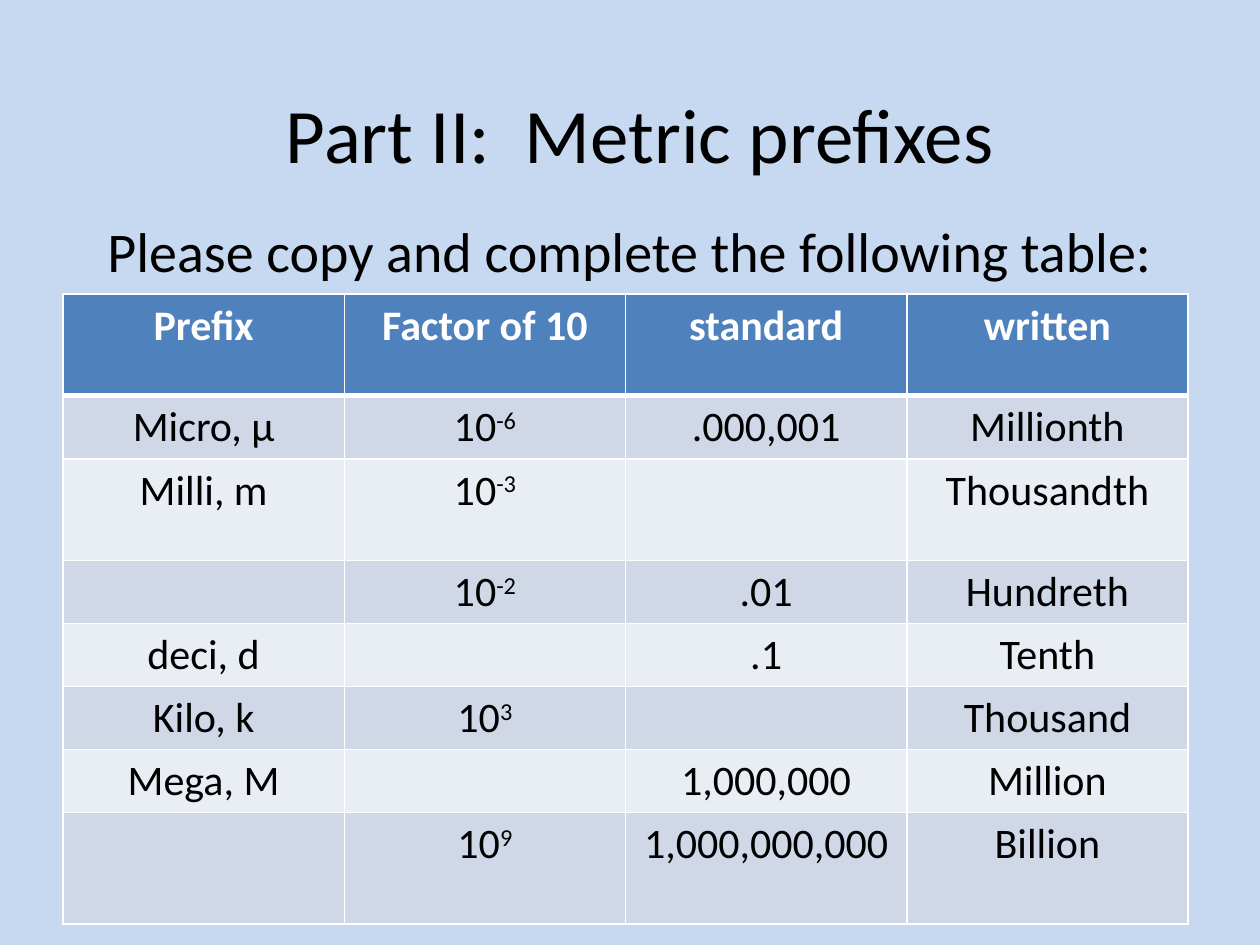
from dataclasses import dataclass

from lxml import etree
from pptx import Presentation
from pptx import util as u
from pptx.dml.color import RGBColor
from pptx.enum import text
from pptx.oxml import ns

# Content: a "^" in a cell starts the exponent
TITLE = "Part II:  Metric prefixes"
SUBTITLE = "Please copy and complete the following table:"
HEADER = ("Prefix", "Factor of 10", "standard", "written")
PREFIXES = [
    ("Micro, µ", "10^-6", ".000,001", "Millionth"),
    ("Milli, m", "10^-3", "", "Thousandth"),
    ("", "10^-2", ".01", "Hundreth"),
    ("deci, d", "", ".1", "Tenth"),
    ("Kilo, k", "10^3", "", "Thousand"),
    ("Mega, M", "", "1,000,000", "Million"),
    ("", "10^9", "1,000,000,000", "Billion"),
]
NORMAL, TALL, LAST = u.Cm(1.25), u.Cm(2.05), u.Cm(2.24)
ROW_HEIGHTS = (TALL, NORMAL, TALL, NORMAL, NORMAL, NORMAL, NORMAL, LAST)
COLUMN_WIDTH = u.Cm(5.67)


@dataclass(frozen=True)
class Theme:
    font: str = "Calibri"
    background: str = "C6D9F1"
    ink: str = "000000"
    white: str = "FFFFFF"
    header: str = "4F81BD"
    bands: tuple = ("D0D8E8", "E9EDF4")
    title_size: int = 44
    subtitle_size: int = 32
    table_size: int = 24


THEME = Theme()


def format_paragraph(paragraph, size, color, bold=False):
    paragraph.alignment = text.PP_ALIGN.CENTER
    for font in [paragraph.font] + [run.font for run in paragraph.runs]:
        font.name, font.size, font.bold = THEME.font, u.Pt(size), bold
        font.color.rgb = RGBColor.from_string(color)


def add_heading(slide, words, box, size, anchor):
    text_frame = slide.shapes.add_textbox(*map(u.Cm, box)).text_frame
    text_frame.word_wrap = True
    text_frame.vertical_anchor = anchor
    text_frame.text = words
    format_paragraph(text_frame.paragraphs[0], size, THEME.ink)


def set_borders(cell, bottom_width, top_width):
    properties = cell._tc.get_or_add_tcPr()
    widths = {"lnL": 1, "lnR": 1, "lnT": top_width, "lnB": bottom_width}
    for position, (side, width) in enumerate(widths.items()):
        line = etree.Element(ns.qn(f"a:{side}"), w=str(u.Pt(width)))
        fill = etree.SubElement(line, ns.qn("a:solidFill"))
        etree.SubElement(fill, ns.qn("a:srgbClr"), val=THEME.white)
        properties.insert(position, line)


def fill_cell(cell, words, row):
    is_header = row == 0
    base, _, exponent = words.partition("^")
    paragraph = cell.text_frame.paragraphs[0]
    paragraph.text = base
    if exponent:
        run = paragraph.add_run()
        run.text = exponent
        run.font._element.set("baseline", "30000")
    format_paragraph(paragraph, THEME.table_size,
                     THEME.white if is_header else THEME.ink, is_header)
    cell.fill.solid()
    color = THEME.header if is_header else THEME.bands[(row - 1) % 2]
    cell.fill.fore_color.rgb = RGBColor.from_string(color)
    set_borders(cell, bottom_width=3 if is_header else 1,
                top_width=3 if row == 1 else 1)


def add_prefix_table(slide):
    rows = [HEADER] + PREFIXES
    table = slide.shapes.add_table(
        len(rows), len(HEADER), u.Cm(1.27), u.Cm(5.93),
        COLUMN_WIDTH * len(HEADER), sum(ROW_HEIGHTS)).table
    for column in table.columns:
        column.width = COLUMN_WIDTH
    for row, (height, entries) in enumerate(zip(ROW_HEIGHTS, rows)):
        table.rows[row].height = height
        for column, words in enumerate(entries):
            fill_cell(table.cell(row, column), words, row)


def main():
    presentation = Presentation()
    presentation.slide_width, presentation.slide_height = u.Cm(25.4), u.Cm(19.05)
    slide = presentation.slides.add_slide(presentation.slide_layouts[6])
    slide.background.fill.solid()
    slide.background.fill.fore_color.rgb = RGBColor.from_string(THEME.background)

    # Title and instruction
    add_heading(slide, TITLE, (2.11, 0.64, 21.59, 4.08),
                THEME.title_size, text.MSO_ANCHOR.MIDDLE)
    add_heading(slide, SUBTITLE, (0, 4.24, 25.4, 4.01),
                THEME.subtitle_size, text.MSO_ANCHOR.TOP)
    # Table to complete
    add_prefix_table(slide)
    presentation.save("out.pptx")


if __name__ == "__main__":
    main()
